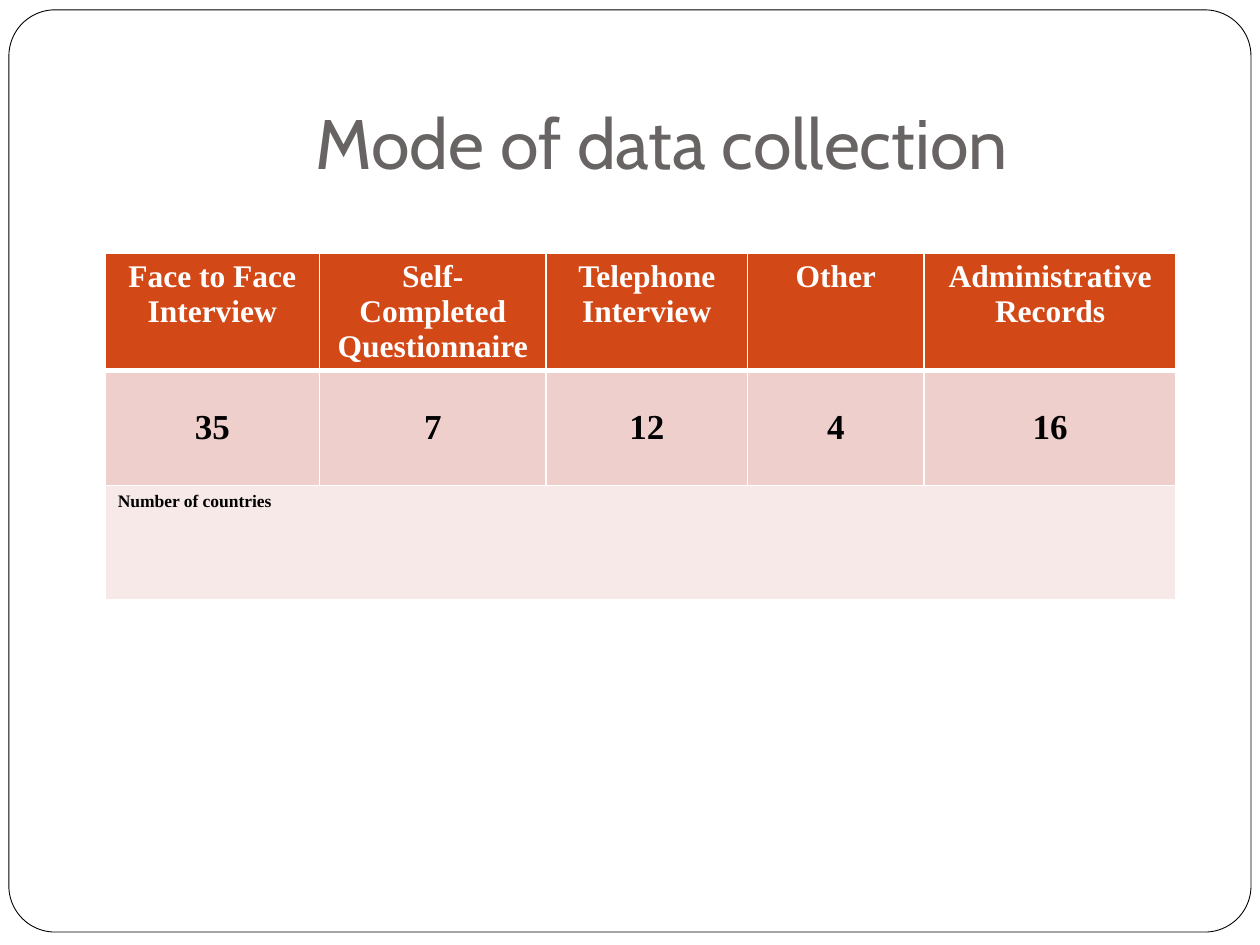
from dataclasses import dataclass

from lxml.etree import SubElement
from pptx import Presentation
from pptx.dml.color import RGBColor
from pptx.enum.shapes import MSO_SHAPE
from pptx.enum.text import MSO_ANCHOR, MSO_AUTO_SIZE, PP_ALIGN
from pptx.oxml.ns import qn
from pptx.util import Cm, Pt


@dataclass(frozen=True)
class Theme:
    """Colours, fonts and type sizes of the slide."""
    white: str = "FFFFFF"
    black: str = "000000"
    title: str = "696464"
    header: str = "D34817"
    count: str = "EFCFCC"
    note: str = "F7E9E8"
    title_font: str = "Cabin"
    table_font: str = "Times New Roman"
    title_size: int = 40
    header_size: int = 18
    count_size: int = 20
    note_size: int = 10


def set_values(target, values):
    """Set each attribute of the target from a dict."""
    for name, value in values.items():
        setattr(target, name, value)


class SlideBuilder:
    """Draw themed elements on the current slide."""

    def __init__(self, slide, theme):
        """Keep the slide and its theme."""
        self.slide = slide
        self.theme = theme

    def add_text(self, text_frame, text, color, align, **font):
        """Add one formatted paragraph."""
        paragraph = text_frame.paragraphs[0]
        paragraph.alignment = align
        run = paragraph.add_run()
        run.text = text
        set_values(run.font, font)
        run.font.color.rgb = RGBColor.from_string(color)

    def title(self, text):
        """Place and format the title placeholder."""
        shape = self.slide.shapes.title
        set_values(shape, {"left": Cm(2.54), "top": Cm(0.76),
                           "width": Cm(21.59), "height": Cm(3.18)})
        set_values(shape.text_frame, {
            "auto_size": MSO_AUTO_SIZE.NONE, "word_wrap": True,
            "vertical_anchor": MSO_ANCHOR.BOTTOM,
            "margin_left": Cm(0.25), "margin_right": Cm(0.25),
            "margin_top": Cm(0.13), "margin_bottom": Cm(0.25)})
        self.add_text(shape.text_frame, text, self.theme.title, PP_ALIGN.CENTER,
                      name=self.theme.title_font, size=Pt(self.theme.title_size))

    def frame(self):
        """Draw the rounded frame behind the title."""
        shape = self.slide.shapes.add_shape(
            MSO_SHAPE.ROUNDED_RECTANGLE, Cm(0.18), Cm(0.2), Cm(25.04), Cm(18.59))
        shape.adjustments[0] = 0.05
        shape.shadow.inherit = False
        shape.fill.solid()
        shape.fill.fore_color.rgb = RGBColor.from_string(self.theme.white)
        shape.line.color.rgb = RGBColor.from_string(self.theme.black)
        shape.line.width = Pt(0.5)
        self.slide.shapes.title._element.addprevious(shape._element)

    def borders(self, cell, widths):
        """Give the cell white borders of the given widths in points."""
        properties = cell._tc.get_or_add_tcPr()
        for position, (side, width) in enumerate(widths.items()):
            line = properties.makeelement(qn(f"a:ln{side}"), {"w": str(Pt(width))})
            fill = SubElement(line, qn("a:solidFill"))
            SubElement(fill, qn("a:srgbClr"), val=self.theme.white)
            properties.insert(position, line)

    def cell(self, cell, text, fill, color, size, align, anchor, top=1, bottom=1):
        """Fill, border and label one table cell."""
        cell.fill.solid()
        cell.fill.fore_color.rgb = RGBColor.from_string(fill)
        cell.vertical_anchor = anchor
        self.borders(cell, {"L": 1, "R": 1, "T": top, "B": bottom})
        if text:
            self.add_text(cell.text_frame, text, color, align, bold=True,
                          name=self.theme.table_font, size=Pt(size))

    def table(self, counts, note):
        """Draw the headings, their counts and the note row."""
        theme = self.theme
        widths = [4.32, 4.57, 4.06, 3.56, 5.08]
        heights = [2.36, 2.31, 2.31]
        table = self.slide.shapes.add_table(
            len(heights), len(widths), Cm(2.12), Cm(5.11),
            Cm(sum(widths)), Cm(sum(heights))).table
        for column, width in zip(table.columns, widths):
            column.width = Cm(width)
        for row, height in zip(table.rows, heights):
            row.height = Cm(height)
        for index, (heading, count) in enumerate(counts.items()):
            self.cell(table.cell(0, index), heading, theme.header, theme.white,
                      theme.header_size, PP_ALIGN.CENTER, MSO_ANCHOR.TOP, bottom=3)
            self.cell(table.cell(1, index), str(count), theme.count, theme.black,
                      theme.count_size, PP_ALIGN.CENTER, MSO_ANCHOR.MIDDLE, top=3)
            self.cell(table.cell(2, index), "" if index else note, theme.note,
                      theme.black, theme.note_size, PP_ALIGN.LEFT, MSO_ANCHOR.TOP)
        table.cell(2, 0).merge(table.cell(2, len(widths) - 1))


def main():
    """Build and save the presentation."""
    presentation = Presentation()
    set_values(presentation, {"slide_width": Cm(25.4), "slide_height": Cm(19.05)})
    slide = presentation.slides.add_slide(presentation.slide_layouts[5])
    builder = SlideBuilder(slide, Theme())
    builder.frame()
    builder.title("Mode of data collection")
    builder.table({
        "Face to Face Interview": 35,
        "Self-Completed Questionnaire": 7,
        "Telephone Interview": 12,
        "Other": 4,
        "Administrative Records": 16,
    }, "Number of countries")
    presentation.save("out.pptx")


if __name__ == "__main__":
    main()
